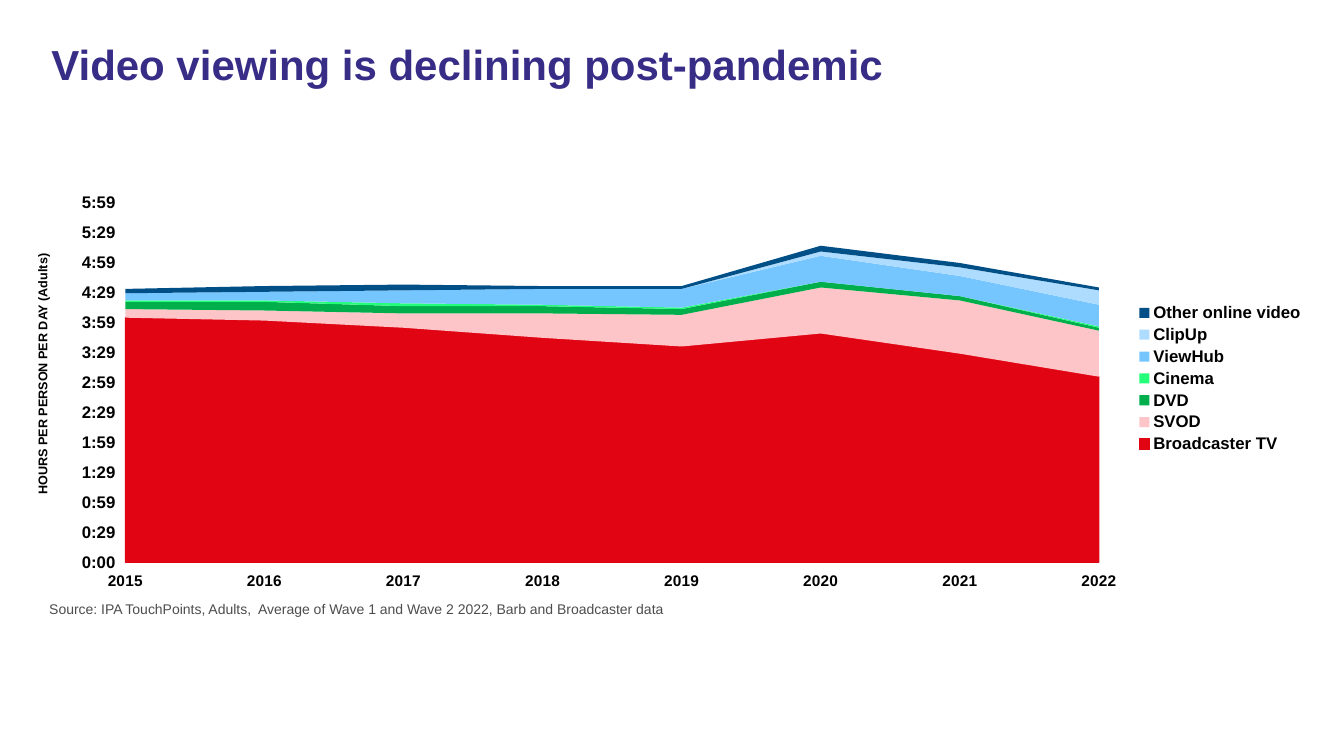
from lxml.etree import SubElement
from pptx import Presentation
from pptx.chart.data import CategoryChartData
from pptx.dml.color import RGBColor
from pptx.enum.chart import XL_CHART_TYPE, XL_LEGEND_POSITION, XL_TICK_MARK
from pptx.enum.text import MSO_ANCHOR, MSO_AUTO_SIZE, PP_ALIGN
from pptx.oxml.ns import qn
from pptx.util import Inches, Pt

COLOURS = {
    "title": "372D87", "text": "000000", "source": "4D4D4D",
    "broadcast": "E10514", "svod": "FEC5C9", "dvd": "00AE4C", "cinema": "24FF79",
    "longform": "75C5FF", "clips": "AEDCFF", "other": "004F87",
}
YEARS = [str(year) for year in range(2015, 2023)]
VIEWING = [
    ("Broadcaster TV", "broadcast", (0.17, 0.168, 0.163, 0.156, 0.15, 0.159, 0.145, 0.129)),
    ("SVOD", "svod", (0.006, 0.007, 0.01, 0.017, 0.022, 0.032, 0.037, 0.032)),
    ("DVD", "dvd", (0.005, 0.006, 0.005, 0.005, 0.004, 0.004, 0.003, 0.002)),
    ("Cinema", "cinema", (0.001, 0.001, 0.002, 0.001, 0.001, 0, 0, 0.001)),
    ("ViewHub", "longform", (0.005, 0.006, 0.009, 0.011, 0.013, 0.018, 0.014, 0.015)),
    ("ClipUp", "clips", (0, 0, 0, 0, 0, 0.003, 0.006, 0.01)),
    ("Other online video", "other", (0.003, 0.004, 0.004, 0.002, 0.002, 0.004, 0.003, 0.002)),
]
PLOT_LAYOUT = {"layoutTarget": "inner", "xMode": "edge", "yMode": "edge",
               "x": 0.074, "y": 0.128, "w": 0.758, "h": 0.761}


def style_font(font, size, colour, bold=False):
    """Apply the slide's typeface with a size, colour and weight."""
    font.name = "Arial"
    font.size = Pt(size)
    font.bold = bold
    font.color.rgb = RGBColor.from_string(COLOURS[colour])


def write(frame, text, size=10, colour="text", bold=False, wrap=True, spacing=None):
    """Put one formatted, top-left paragraph in a text frame."""
    frame.auto_size = MSO_AUTO_SIZE.NONE
    frame.word_wrap = wrap
    frame.vertical_anchor = MSO_ANCHOR.TOP
    paragraph = frame.paragraphs[0]
    paragraph.alignment = PP_ALIGN.LEFT
    paragraph.line_spacing = spacing
    run = paragraph.add_run()
    run.text = text
    style_font(run.font, size, colour, bold)


class ViewingSlide:
    """Hold the current slide and add its elements."""

    def __init__(self, deck):
        """Start a title-only slide."""
        self.slide = deck.slides.add_slide(deck.slide_layouts[5])

    def title(self, text, box):
        """Place and format the title."""
        heading = self.slide.shapes.title
        heading.left, heading.top, heading.width, heading.height = map(Inches, box)
        write(heading.text_frame, text, size=30, colour="title", bold=True, spacing=0.9)

    def label(self, text, box, rotation=0, **style):
        """Add a text box, turned if asked."""
        caption = self.slide.shapes.add_textbox(*map(Inches, box))
        caption.rotation = rotation
        write(caption.text_frame, text, **style)

    def area_chart(self, box):
        """Add the stacked area chart of viewing time."""
        viewing = CategoryChartData(number_format="h:mm")
        viewing.categories = YEARS
        for name, _, values in VIEWING:
            viewing.add_series(name, values)
        chart = self.slide.shapes.add_chart(
            XL_CHART_TYPE.AREA_STACKED, *map(Inches, box), viewing).chart
        chart.has_title = False
        style_font(chart.font, 12, "text")
        for series, (_, colour, _) in zip(chart.plots[0].series, VIEWING):
            series.format.fill.solid()
            series.format.fill.fore_color.rgb = RGBColor.from_string(COLOURS[colour])
            series.format.line.fill.background()
        broadcast_line = chart.plots[0].series[0].format.line
        broadcast_line.color.rgb = RGBColor.from_string(COLOURS["broadcast"])
        broadcast_line.width = Pt(0.75)
        self.axes(chart)
        chart.has_legend = True
        chart.legend.position = XL_LEGEND_POSITION.RIGHT
        chart.legend.include_in_layout = False
        style_font(chart.legend.font, 12, "text", bold=True)
        self.plot_layout(chart)

    def axes(self, chart):
        """Format the year and time axes."""
        for axis, size in ((chart.category_axis, 11), (chart.value_axis, 12)):
            axis.has_major_gridlines = False
            axis.major_tick_mark = XL_TICK_MARK.OUTSIDE
            axis.minor_tick_mark = XL_TICK_MARK.NONE
            axis.format.line.fill.background()
            style_font(axis.tick_labels.font, size, "text", bold=True)
        hours = chart.value_axis
        hours.minimum_scale, hours.maximum_scale = 0, 0.25
        hours.major_unit = 0.020833
        hours.tick_labels.number_format = "h:mm"
        hours.tick_labels.number_format_is_linked = False
        for crossing in chart.element.iter(qn("c:crossBetween")):
            crossing.set("val", "midCat")

    def plot_layout(self, chart):
        """Fix the inner plot area within the chart."""
        plot_area = chart.element.find(".//" + qn("c:plotArea"))
        layout = plot_area.find(qn("c:layout"))
        if layout is None:
            layout = SubElement(plot_area, qn("c:layout"))
            plot_area.insert(0, layout)
        manual = SubElement(layout, qn("c:manualLayout"))
        for key, value in PLOT_LAYOUT.items():
            SubElement(manual, qn("c:" + key)).set("val", str(value))


def main():
    """Build and save the slide."""
    deck = Presentation()
    deck.slide_width, deck.slide_height = Inches(13.33), Inches(7.5)
    page = ViewingSlide(deck)
    page.area_chart((0.3, 1.41, 12.74, 4.69))
    page.title("Video viewing is declining post-pandemic", (0.41, 0.39, 12.4, 1.12))
    page.label("Source: IPA TouchPoints, Adults,  Average of Wave 1 and Wave 2 2022, "
               "Barb and Broadcaster data", (0.39, 5.91, 12.4, 0.33), colour="source")
    page.label("HOURS PER PERSON PER DAY (Adults)", (-1.12, 3.34, 3.08, 0.25),
               rotation=270, size=9, bold=True)
    deck.save("out.pptx")


if __name__ == "__main__":
    main()
